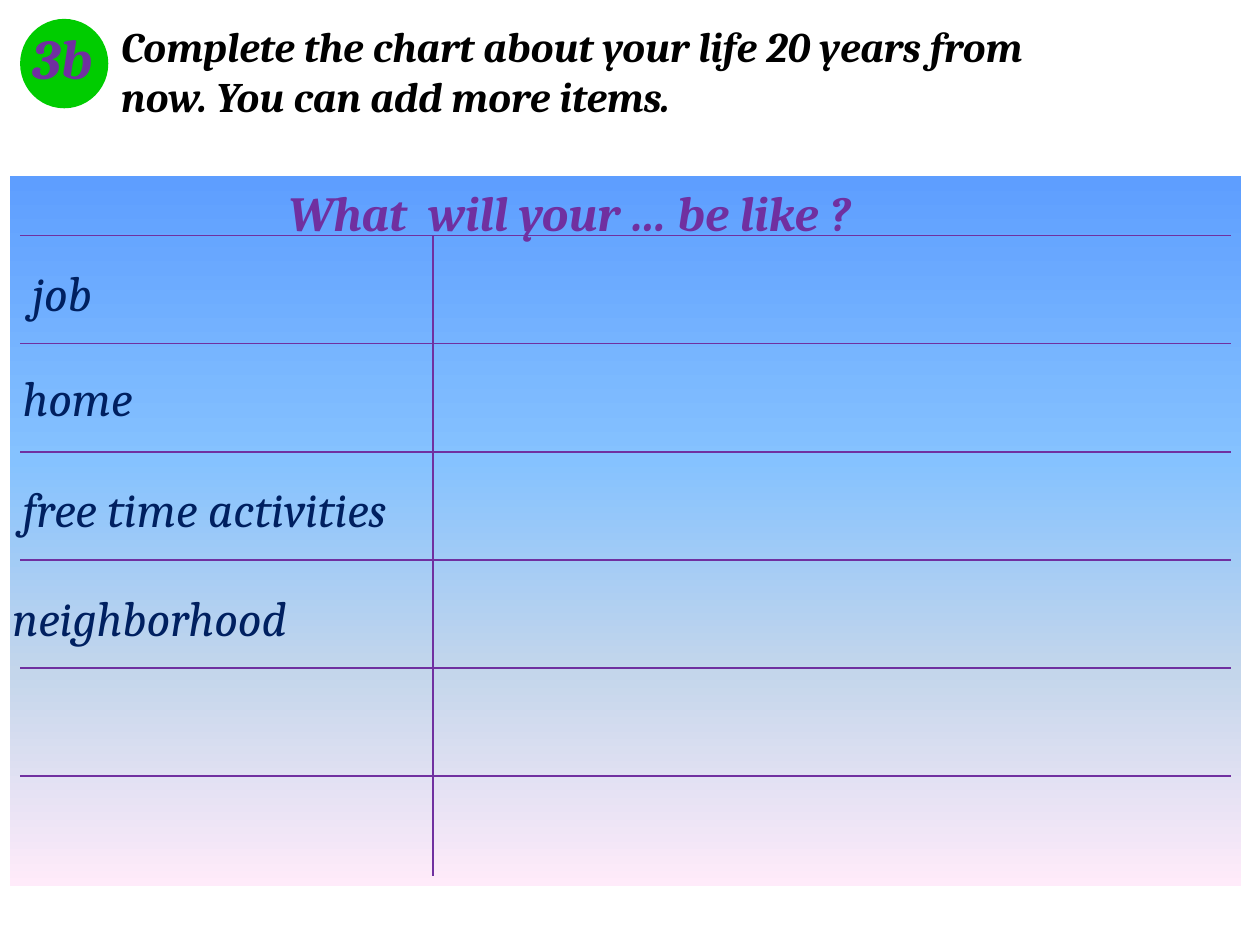
from copy import deepcopy
from pptx import Presentation
from pptx.dml.color import RGBColor
from pptx.enum import shapes, text
from pptx.oxml.ns import qn
from pptx.oxml.xmlchemy import OxmlElement
from pptx.util import Pt

FONT = "Cambria"
PURPLE, NAVY, GREEN, BLACK = "7030A0", "002060", "00CC00", "000000"
INSTRUCTION = ["Complete the chart about your life 20 years from",
               "now. You can add more items."]
BADGE = "3b"
QUESTION = "What  will your … be like ?"
TOPICS = [("job", 11.5, 146.2, 230), ("home", 5.8, 206.6, 230),
          ("free time activities", 5.8, 270, 338),
          ("neighborhood", 0, 331.9, 338)]
GRADIENT = [(0, "5E9EFF"), (0.4, "85C2FF"), (0.7, "C4D6EB"), (1, "FFEBFA")]

GRID_LEFT, GRID_RIGHT, GRID_TOP, GRID_BOTTOM = 11.5, 703.4, 134.6, 500.4
DIVIDER, ROW_HEIGHT, RULES = 247.6, 61.78, 6


def color(hex_code):
    return RGBColor.from_string(hex_code)


def place(part, left, top, width, height):
    part.left, part.top, part.width, part.height = map(
        Pt, (left, top, width, height))


def write(part, lines, size, hex_code, bold=True):
    frame = part.text_frame
    frame.word_wrap = True
    frame.auto_size = text.MSO_AUTO_SIZE.NONE
    frame.vertical_anchor = text.MSO_ANCHOR.TOP
    for i, line in enumerate(lines):
        paragraph = frame.add_paragraph() if i else frame.paragraphs[0]
        paragraph.alignment = text.PP_ALIGN.LEFT
        run = paragraph.add_run()
        run.text = line
        font = run.font
        font.name, font.size, font.bold, font.italic = FONT, Pt(size), bold, True
        font.color.rgb = color(hex_code)


def add_label(slide, label, box, size, hex_code, bold=True):
    part = slide.shapes.add_textbox(*map(Pt, box))
    write(part, [label], size, hex_code, bold)
    return part


def add_panel(slide, kind, box):
    panel = slide.shapes.add_shape(kind, *map(Pt, box))
    panel.shadow.inherit = False
    panel.line.fill.background()
    return panel


def add_rule(slide, *ends):
    rule = slide.shapes.add_connector(
        shapes.MSO_CONNECTOR.STRAIGHT, *map(Pt, ends))
    rule.line.color.rgb = color(PURPLE)
    rule.line.width = Pt(1)
    rule._element.spPr.append(OxmlElement("a:effectLst"))


def fill_gradient(panel, stops):
    panel.fill.gradient()
    panel.fill.gradient_angle = 270
    stop_list = panel._element.spPr.find(qn("a:gradFill")).find(qn("a:gsLst"))
    while len(stop_list) < len(stops):
        stop_list.append(deepcopy(stop_list[0]))
    for stop, (position, hex_code) in zip(panel.fill.gradient_stops, stops):
        stop.position = position
        stop.color.rgb = color(hex_code)


def main():
    deck = Presentation()
    deck.slide_width, deck.slide_height = Pt(720), Pt(540)
    slide = deck.slides.add_slide(deck.slide_layouts[5])

    instruction = slide.shapes.title
    place(instruction, 62, 7.9, 725.8, 65.5)
    write(instruction, INSTRUCTION, 24, BLACK)

    circle = add_panel(slide, shapes.MSO_SHAPE.OVAL, (11.5, 10.8, 50.4, 51.1))
    circle.fill.solid()
    circle.fill.fore_color.rgb = color(GREEN)
    add_label(slide, BADGE, (11.5, 10.1, 61.9, 46.1), 32, PURPLE)

    chart_panel = add_panel(slide, shapes.MSO_SHAPE.RECTANGLE,
                            (5.8, 100.8, 703.4, 405.4))
    fill_gradient(chart_panel, GRADIENT)
    for row in range(RULES):
        y = GRID_TOP + row * ROW_HEIGHT
        add_rule(slide, GRID_LEFT, y, GRID_RIGHT, y)
    add_rule(slide, DIVIDER, GRID_TOP, DIVIDER, GRID_BOTTOM)

    add_label(slide, QUESTION, (157.7, 100.8, 421.9, 41), 28, PURPLE)
    for topic, left, top, width in TOPICS:
        add_label(slide, topic, (left, top, width, 41), 28, NAVY, bold=False)

    deck.save("out.pptx")


if __name__ == "__main__":
    main()
